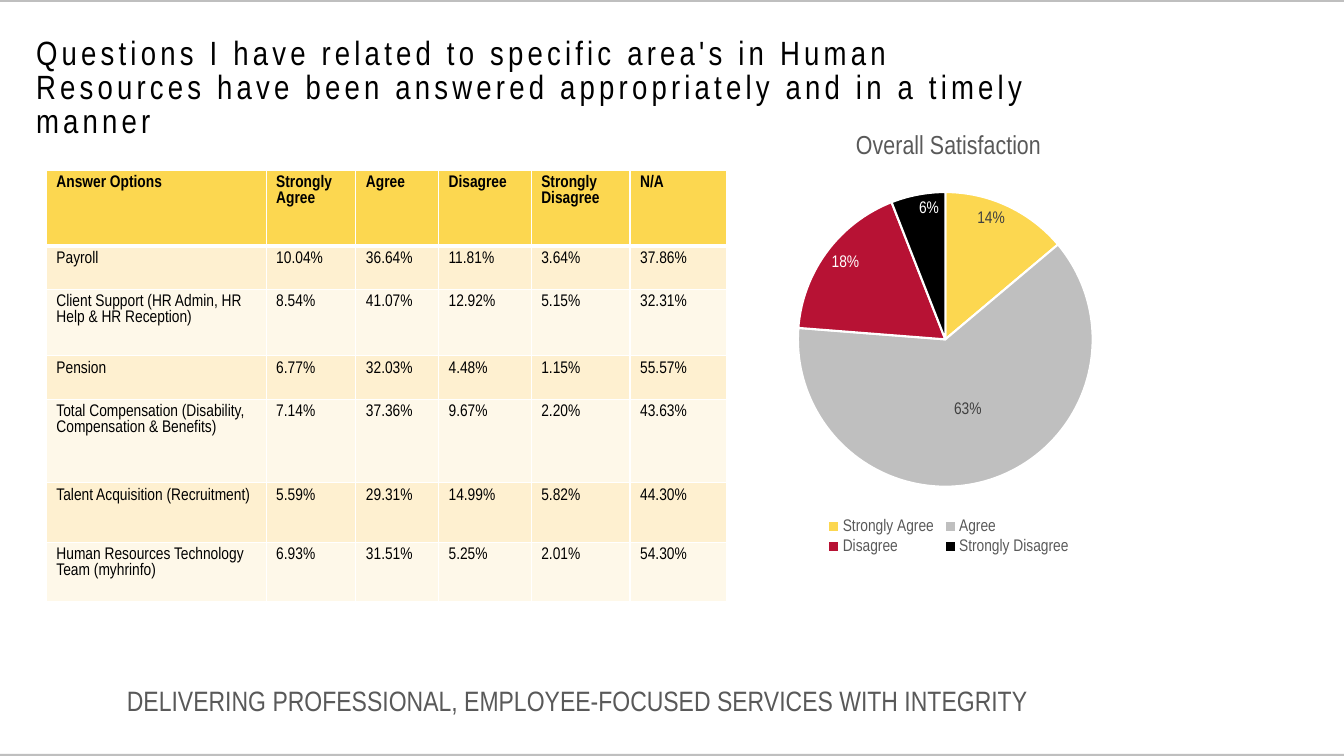
"""Build the slide on how Human Resources questions were answered."""
from lxml import etree
from pptx import Presentation, util as u
from pptx.chart import data
from pptx.dml import color
from pptx.enum import chart as charts, shapes, text
from pptx.oxml import ns

THEME = {
    "font": "Arial Narrow",
    "title": "000000", "table": "000000", "muted": "595959",
    "label": "404040", "white": "FFFFFF", "rule": "BFBFBF",
    "header": "FCD750", "bands": ("FEF0D0", "FEF8E9"),
    "title size": 24, "footer size": 20, "chart title size": 18.6,
    "body size": 12, "chart size": 10,
}

TITLE = ("Questions I have related to specific area's in Human Resources "
         "have been answered appropriately and in a timely manner")
FOOTER = "DELIVERING PROFESSIONAL, EMPLOYEE-FOCUSED SERVICES WITH INTEGRITY"
ANSWERS = [
    ("Answer Options", "Strongly Agree", "Agree", "Disagree", "Strongly Disagree", "N/A"),
    ("Payroll", "10.04%", "36.64%", "11.81%", "3.64%", "37.86%"),
    ("Client Support (HR Admin, HR Help & HR Reception)",
     "8.54%", "41.07%", "12.92%", "5.15%", "32.31%"),
    ("Pension", "6.77%", "32.03%", "4.48%", "1.15%", "55.57%"),
    ("Total Compensation (Disability, Compensation & Benefits)",
     "7.14%", "37.36%", "9.67%", "2.20%", "43.63%"),
    ("Talent Acquisition (Recruitment)", "5.59%", "29.31%", "14.99%", "5.82%", "44.30%"),
    ("Human Resources Technology Team (myhrinfo)",
     "6.93%", "31.51%", "5.25%", "2.01%", "54.30%"),
]
COLUMN_WIDTHS = (2.18, 0.89, 0.82, 0.92, 0.98, 0.96)
ROW_HEIGHTS = (0.75, 0.43, 0.66, 0.43, 0.83, 0.59, 0.59)
CHART_TITLE = "Overall Satisfaction"
INSIDE, CENTER = charts.XL_LABEL_POSITION.INSIDE_END, charts.XL_LABEL_POSITION.CENTER
SATISFACTION = [
    ("Strongly Agree", 14, "FCD750", THEME["label"], INSIDE),
    ("Agree", 63, "BFBFBF", THEME["label"], CENTER),
    ("Disagree", 18, "B71234", THEME["white"], INSIDE),
    ("Strongly Disagree", 6, "000000", THEME["white"], INSIDE),
]
PLOT_AREA = {"x": 0.126, "y": 0.122, "w": 0.731, "h": 0.771}
SLIDE_WIDTH, SLIDE_HEIGHT, RULE_HEIGHT = 13.33, 7.5, 0.02


def inches(*lengths):
    return [u.Inches(length) for length in lengths]


def rgb(value):
    return color.RGBColor.from_string(value)


def set_font(font, size, fill, bold=False):
    formats = {"name": THEME["font"], "size": u.Pt(size), "bold": bold}
    for name, value in formats.items():
        setattr(font, name, value)
    font.color.rgb = rgb(fill)


def add_rule(slide, top):
    rule = slide.shapes.add_shape(
        shapes.MSO_SHAPE.RECTANGLE, *inches(0, top, SLIDE_WIDTH, RULE_HEIGHT))
    rule.shadow.inherit = False
    rule.fill.solid()
    rule.fill.fore_color.rgb = rgb(THEME["rule"])
    rule.line.fill.background()


def add_text(slide, box, words, size, fill, spacing, anchor):
    frame = slide.shapes.add_textbox(*inches(*box)).text_frame
    for name, value in {"word_wrap": True, "vertical_anchor": anchor}.items():
        setattr(frame, name, value)
    paragraph = frame.paragraphs[0]
    paragraph.line_spacing = spacing
    run = paragraph.add_run()
    run.text = words
    set_font(run.font, size, fill)
    return run


def add_borders(cell, row):
    properties = cell._tc.get_or_add_tcPr()
    widths = {"lnL": 1, "lnR": 1, "lnT": 3 if row == 1 else 1, "lnB": 3 if row == 0 else 1}
    for side, width in widths.items():
        line = etree.SubElement(properties, ns.qn(f"a:{side}"), w=str(u.Pt(width)))
        fill = etree.SubElement(line, ns.qn("a:solidFill"))
        etree.SubElement(fill, ns.qn("a:srgbClr"), val=THEME["white"])


def add_answers(slide):
    table = slide.shapes.add_table(
        len(ANSWERS), len(COLUMN_WIDTHS),
        *inches(0.46, 1.69, sum(COLUMN_WIDTHS), sum(ROW_HEIGHTS))).table
    for column, width in zip(table.columns, COLUMN_WIDTHS):
        column.width = u.Inches(width)
    for row, height in zip(table.rows, ROW_HEIGHTS):
        row.height = u.Inches(height)
    for r, answers in enumerate(ANSWERS):
        for c, words in enumerate(answers):
            cell = table.cell(r, c)
            add_borders(cell, r)
            cell.fill.solid()
            cell.fill.fore_color.rgb = rgb(THEME["bands"][(r - 1) % 2] if r else THEME["header"])
            cell.text = words
            run = cell.text_frame.paragraphs[0].runs[0]
            set_font(run.font, THEME["body size"], THEME["table"], r == 0)


def place_plot(chart):
    plot_area = chart.element.find(".//" + ns.qn("c:plotArea"))
    for layout in plot_area.findall(ns.qn("c:layout")):
        plot_area.remove(layout)
    layout = etree.Element(ns.qn("c:layout"))
    manual = etree.SubElement(layout, ns.qn("c:manualLayout"))
    settings = {"layoutTarget": "inner", "xMode": "edge", "yMode": "edge", **PLOT_AREA}
    for name, value in settings.items():
        etree.SubElement(manual, ns.qn(f"c:{name}"), val=str(value))
    plot_area.insert(0, layout)


def add_satisfaction(slide):
    chart_data = data.CategoryChartData(number_format='0"%"')
    chart_data.categories = [name for name, *_ in SATISFACTION]
    chart_data.add_series("Series 1", [value for _, value, *_ in SATISFACTION])
    chart = slide.shapes.add_chart(
        charts.XL_CHART_TYPE.PIE, *inches(7.41, 1.13, 4, 4.41), chart_data).chart
    set_font(chart.font, THEME["chart size"], THEME["title"])
    chart.has_title = True
    chart.chart_title.include_in_layout = False
    heading = chart.chart_title.text_frame.paragraphs[0].add_run()
    heading.text = CHART_TITLE
    set_font(heading.font, THEME["chart title size"], THEME["muted"])
    chart.has_legend = True
    chart.legend.position = charts.XL_LEGEND_POSITION.BOTTOM
    chart.legend.include_in_layout = False
    set_font(chart.legend.font, THEME["body size"], THEME["muted"])
    plot = chart.plots[0]
    plot.vary_by_categories = True
    labels = plot.series[0].data_labels
    formats = {"show_value": True, "number_format": '0"%"',
               "number_format_is_linked": False, "position": INSIDE}
    for name, value in formats.items():
        setattr(labels, name, value)
    set_font(labels.font, THEME["body size"], THEME["label"])
    for index, (_, _, fill, label_fill, position) in enumerate(SATISFACTION):
        point = plot.series[0].points[index]
        point.format.fill.solid()
        point.format.fill.fore_color.rgb = rgb(fill)
        point.format.line.color.rgb = rgb(THEME["white"])
        point.format.line.width = u.Pt(1.5)
        set_font(point.data_label.font, THEME["body size"], label_fill)
        point.data_label.position = position
    place_plot(chart)


def main():
    presentation = Presentation()
    presentation.slide_width, presentation.slide_height = inches(SLIDE_WIDTH, SLIDE_HEIGHT)
    slide = presentation.slides.add_slide(presentation.slide_layouts[6])
    for top in (0, SLIDE_HEIGHT - RULE_HEIGHT):
        add_rule(slide, top)
    title = add_text(slide, (0.26, 0.36, 10.24, 1.05), TITLE, THEME["title size"],
                     THEME["title"], 0.85, text.MSO_ANCHOR.MIDDLE)
    title.font._element.set("spc", "300")
    add_satisfaction(slide)
    add_answers(slide)
    add_text(slide, (1.16, 6.77, 9.59, 0.73), FOOTER, THEME["footer size"],
             THEME["muted"], 0.9, text.MSO_ANCHOR.TOP)
    presentation.save("out.pptx")


if __name__ == "__main__":
    main()
